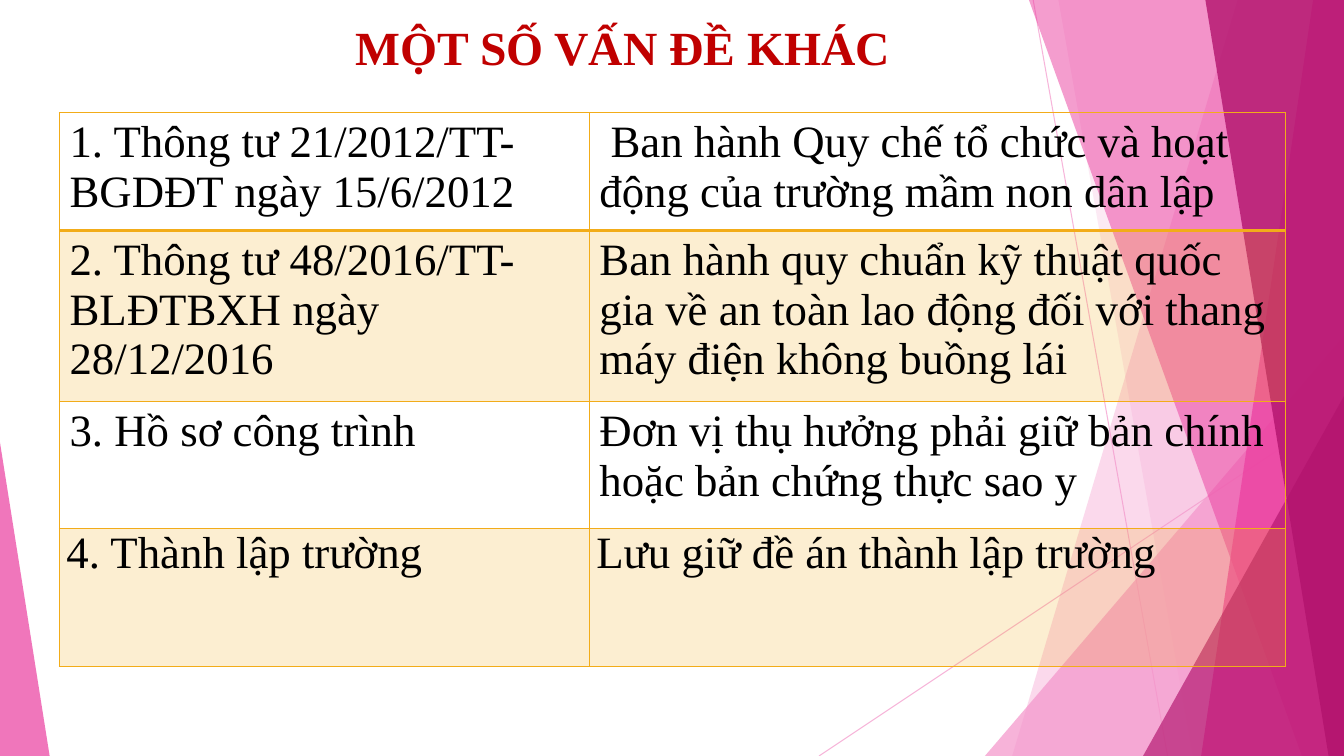
from dataclasses import dataclass

from lxml import etree
from pptx import Presentation
from pptx.dml.color import RGBColor
from pptx.enum.shapes import MSO_CONNECTOR, MSO_SHAPE
from pptx.enum.text import MSO_ANCHOR, PP_ALIGN
from pptx.oxml.ns import qn
from pptx.util import Pt

STRAIGHT = MSO_CONNECTOR.STRAIGHT
TRIANGLE = MSO_SHAPE.ISOSCELES_TRIANGLE
TOP = MSO_ANCHOR.TOP
CENTER, LEFT = PP_ALIGN.CENTER, PP_ALIGN.LEFT
SLIDE_W, SLIDE_H = 960, 540


@dataclass(frozen=True)
class Theme:
    font: str = "Times New Roman"
    title_size: float = 34
    body_size: float = 32
    title: str = "C00000"
    text: str = "000000"
    gold: str = "F2AC19"
    light: str = "F496CB"
    pink: str = "EB3D9F"
    deep: str = "B2136D"
    band_opacity: int = 20
    line_opacity: int = 70


class Deck:
    """Draws the elements of the current slide in one theme."""

    def __init__(self, prs, theme):
        self.theme = theme
        self.s = prs.slides.add_slide(prs.slide_layouts[6])

    def paint(self, fill, color, opacity):
        fill.solid()
        fill.fore_color.rgb = RGBColor.from_string(color)
        clr = fill._xPr.find(qn("a:solidFill"))[0]
        etree.SubElement(clr, qn("a:alpha"), val=str(opacity * 1000))

    def finish(self, sp, color, opacity):
        sp.shadow.inherit = False
        sp.line.fill.background()
        self.paint(sp.fill, color, opacity)

    def line(self, x1, y1, x2, y2):
        cx = self.s.shapes.add_connector(STRAIGHT, Pt(x1), Pt(y1), Pt(x2), Pt(y2))
        cx.line.width = Pt(0.75)
        self.paint(cx.line.fill, self.theme.light, self.theme.line_opacity)
        etree.SubElement(cx._element.spPr, qn("a:effectLst"))

    def facet(self, top_x, bottom_x, color, opacity):
        fb = self.s.shapes.build_freeform(Pt(top_x), 0)
        corners = [(SLIDE_W, 0), (SLIDE_W, SLIDE_H), (bottom_x, SLIDE_H)]
        fb.add_line_segments([(Pt(x), Pt(y)) for x, y in corners], close=True)
        self.finish(fb.convert_to_shape(), color, opacity)

    def triangle(self, x, y, w, apex, color, opacity):
        sp = self.s.shapes.add_shape(TRIANGLE, Pt(x), Pt(y), Pt(w), Pt(SLIDE_H - y))
        sp.adjustments[0] = apex
        self.finish(sp, color, opacity)

    def run(self, p, text, size, color, bold=False):
        r = p.add_run()
        r.text = text
        r.font.name = self.theme.font
        r.font.size = Pt(size)
        r.font.bold = bold
        r.font.color.rgb = RGBColor.from_string(color)

    def title(self, x, y, w, h, text):
        tf = self.s.shapes.add_textbox(Pt(x), Pt(y), Pt(w), Pt(h)).text_frame
        tf.word_wrap = True
        tf.vertical_anchor = TOP
        p = tf.paragraphs[0]
        p.alignment = CENTER
        self.run(p, text, self.theme.title_size, self.theme.title, True)

    def border(self, cell, side, width):
        tcPr = cell._tc.get_or_add_tcPr()
        ln = etree.SubElement(tcPr, qn(f"a:ln{side}"), w=str(Pt(width)))
        fill = etree.SubElement(ln, qn("a:solidFill"))
        etree.SubElement(fill, qn("a:srgbClr"), val=self.theme.gold)

    def cell(self, cell, text, banded, widths):
        for side, width in zip("LRTB", widths):
            self.border(cell, side, width)
        if banded:
            self.paint(cell.fill, self.theme.gold, self.theme.band_opacity)
        else:
            cell.fill.background()
        cell.vertical_anchor = TOP
        p = cell.text_frame.paragraphs[0]
        p.alignment = LEFT
        self.run(p, text, self.theme.body_size, self.theme.text)
        return p

    def table(self, x, y, cols, heights, rows):
        frame = self.s.shapes.add_table(len(rows), len(cols), Pt(x), Pt(y),
                                        Pt(sum(cols)), Pt(sum(heights)))
        tbl = frame.table
        tbl.first_row = tbl.horz_banding = False
        for col, width in zip(tbl.columns, cols):
            col.width = Pt(width)
        for i, (height, texts) in enumerate(zip(heights, rows)):
            tbl.rows[i].height = Pt(height)
            widths = (1, 1, 2 if i == 1 else 1, 2 if i == 0 else 1)
            for j, text in enumerate(texts):
                self.cell(tbl.cell(i, j), text, i % 2 == 1, widths)
        return tbl


ROWS = [
    ("1. Thông tư 21/2012/TT-BGDĐT ngày 15/6/2012",
     "Ban hành Quy chế tổ chức và hoạt động của trường mầm non dân lập"),
    ("2. Thông tư 48/2016/TT-BLĐTBXH ngày 28/12/2016",
     "Ban hành quy chuẩn kỹ thuật quốc gia về an toàn lao động đối với thang máy "
     "điện không buồng lái"),
    ("3. Hồ sơ công trình",
     "Đơn vị thụ hưởng phải giữ bản chính hoặc bản chứng thực sao y"),
    ("4. Thành lập trường", "Lưu giữ đề án thành lập trường"),
]


def main():
    prs = Presentation()
    prs.slide_width, prs.slide_height = Pt(SLIDE_W), Pt(SLIDE_H)
    theme = Theme()
    deck = Deck(prs, theme)

    deck.line(738, 0, 834, SLIDE_H)
    deck.line(SLIDE_W, 290, 585, SLIDE_H)
    deck.facet(884, 723, theme.light, 36)
    deck.facet(756, 852, theme.light, 20)
    deck.triangle(703.5, 240, 256.5, 1, theme.light, 72)
    deck.facet(735, 930, theme.pink, 50)
    deck.facet(938, 858, theme.pink, 70)
    deck.facet(861, 949, theme.deep, 80)
    deck.triangle(816.5, 283, 143.5, 1, theme.deep, 66)
    deck.triangle(0, 316, 35.5, 0, theme.pink, 70)

    deck.title(18, 9.5, 854, 40, "MỘT SỐ VẤN ĐỀ KHÁC")
    tbl = deck.table(42.5, 80.5, (378.5, 497), (78.5, 114, 90.5, 98.5), ROWS)
    tbl.cell(0, 1).text_frame.paragraphs[0]._p.get_or_add_pPr().set("indent", str(Pt(8)))
    for cell in tbl.rows[len(ROWS) - 1].cells:
        cell.margin_left = cell.margin_right = Pt(5)
        cell.margin_top = cell.margin_bottom = 0

    prs.save("out.pptx")


if __name__ == "__main__":
    main()
